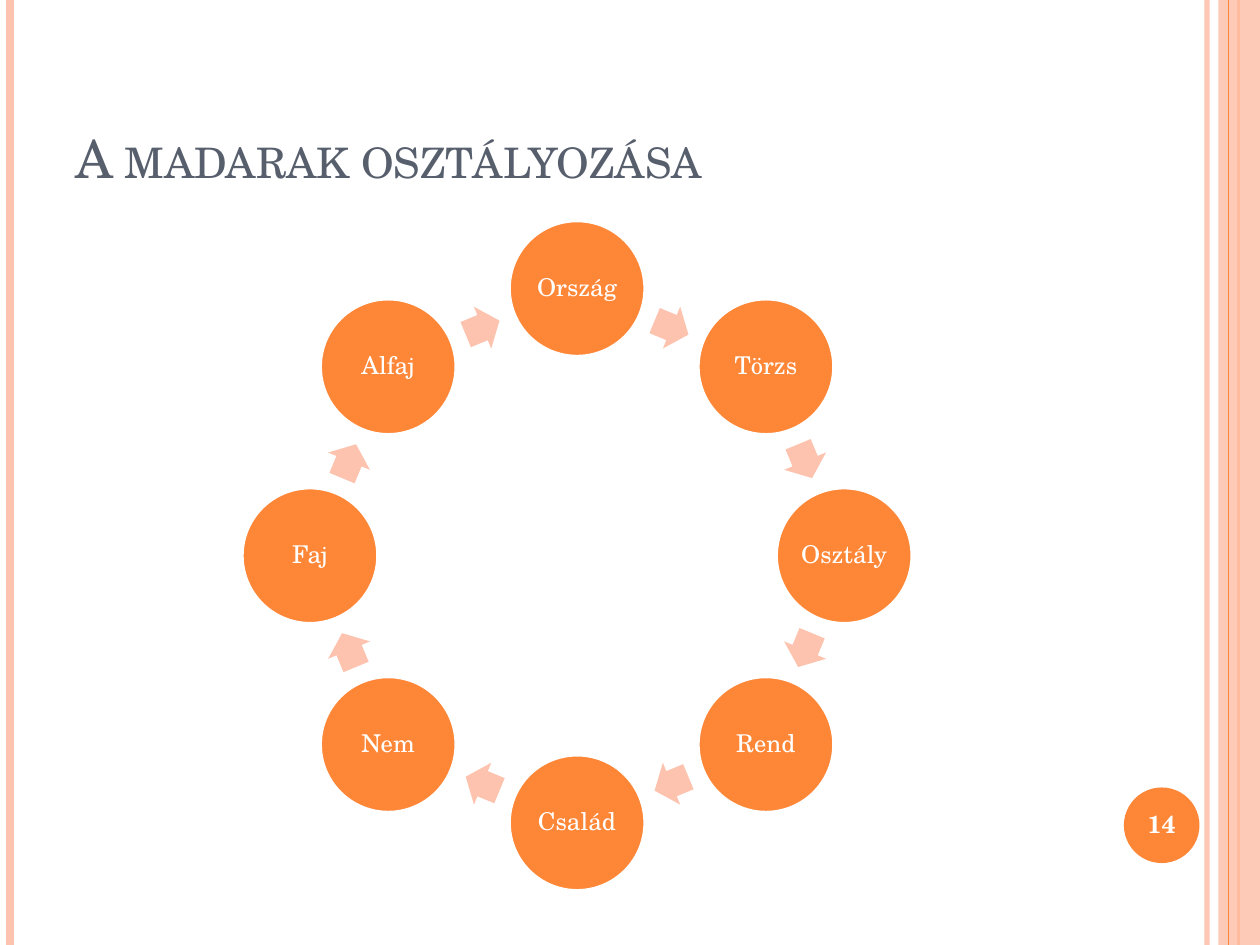
from math import cos, pi, sin

from lxml.etree import SubElement
from pptx import Presentation
from pptx.dml.color import RGBColor
from pptx.enum.shapes import MSO_CONNECTOR, MSO_SHAPE
from pptx.enum.text import MSO_ANCHOR, PP_ALIGN
from pptx.oxml.ns import qn
from pptx.util import Inches, Pt

COLORS = {"orange": "FE8637", "peach": "FEC3AE", "slate": "575F6D", "white": "FFFFFF"}
FONT = "TeX Gyre Schola"
RANKS = ["Ország", "Törzs", "Osztály", "Rend", "Család", "Nem", "Faj", "Alfaj"]
CENTER_X, CENTER_Y, RADIUS = 4.58, 4.41, 2.12
CIRCLE = 1.08
ARROW_WIDTH, ARROW_HEIGHT = 0.29, 0.36


class SlideStyle:
    """Holds the colours, the font and the slide being drawn."""

    def __init__(self, page, colors, font):
        self.page = page
        self.colors = colors
        self.font = font

    def color(self, name):
        """Return the named colour."""
        return RGBColor.from_string(self.colors[name])

    def fade(self, fill, opacity):
        """Make a solid fill partly transparent, with opacity in percent."""
        if opacity < 100:
            node = next(fill.iter(qn("a:srgbClr")))
            SubElement(node, qn("a:alpha"), val=str(opacity * 1000))

    def stripe(self, x, name, width, opacity=100):
        """Draw a vertical line over the full height."""
        line = self.page.shapes.add_connector(
            MSO_CONNECTOR.STRAIGHT, Inches(x), Inches(0), Inches(x), Inches(7.5))
        line.line.color.rgb = self.color(name)
        line.line.width = Pt(width)
        properties = line._element.spPr
        self.fade(properties, opacity)
        SubElement(properties, qn("a:effectLst"))

    def shape(self, kind, x, y, width, height, fill, opacity=100):
        """Draw a filled preset shape without an outline."""
        shape = self.page.shapes.add_shape(
            kind, Inches(x), Inches(y), Inches(width), Inches(height))
        shape.shadow.inherit = False
        shape.fill.solid()
        shape.fill.fore_color.rgb = self.color(fill)
        self.fade(shape._element.spPr, opacity)
        shape.line.fill.background()
        return shape

    def label(self, shape, text, size, color, align, anchor, bold=False):
        """Put one styled paragraph into a shape and return its run."""
        frame = shape.text_frame
        frame.word_wrap = True
        frame.vertical_anchor = anchor
        frame.text = text
        para = frame.paragraphs[0]
        para.alignment = align
        span = para.runs[0]
        span.font.size = Pt(size)
        span.font.name = self.font
        span.font.bold = bold
        span.font.color.rgb = self.color(color)
        return span

    def title(self, text, x, y, width, height):
        """Set the heading in small capitals."""
        box = self.page.shapes.add_textbox(
            Inches(x), Inches(y), Inches(width), Inches(height))
        span = self.label(box, text, 30, "slate", PP_ALIGN.LEFT, MSO_ANCHOR.BOTTOM)
        span.font._element.set("cap", "small")

    def circle(self, text, x, y, size, bold=False):
        """Draw an orange circle with a centred label."""
        circle = self.shape(MSO_SHAPE.OVAL, x, y, size, size, "orange")
        frame = circle.text_frame
        frame.margin_left = frame.margin_right = Inches(0.02)
        frame.margin_top = frame.margin_bottom = Inches(0.02)
        self.label(circle, text, 14, "white", PP_ALIGN.CENTER, MSO_ANCHOR.MIDDLE, bold)
        frame.paragraphs[0].line_spacing = 0.9
        return circle

    def rank(self, text, x, y):
        """Draw one circle of the cycle around its centre."""
        circle = self.circle(text, x - CIRCLE / 2, y - CIRCLE / 2, CIRCLE)
        circle.line.color.rgb = self.color("white")
        circle.line.width = Pt(2)

    def arrow(self, x, y, rotation):
        """Draw one turned block arrow around its centre."""
        arrow = self.shape(MSO_SHAPE.RIGHT_ARROW, x - ARROW_WIDTH / 2,
                           y - ARROW_HEIGHT / 2, ARROW_WIDTH, ARROW_HEIGHT, "peach")
        arrow.adjustments[0] = 0.6
        arrow.adjustments[1] = 0.5
        arrow.rotation = rotation

    def cycle(self, labels):
        """Place the circles on a ring, with an arrow between neighbours."""
        step = 2 * pi / len(labels)
        middle = RADIUS * cos(step / 2)
        for index, label in enumerate(labels):
            angle = index * step
            self.rank(label, CENTER_X + RADIUS * sin(angle), CENTER_Y - RADIUS * cos(angle))
            angle += step / 2
            self.arrow(CENTER_X + middle * sin(angle), CENTER_Y - middle * cos(angle),
                       (index + 0.5) * 360 / len(labels))


def main():
    """Build the slide and save it."""
    deck = Presentation()
    deck.slide_width, deck.slide_height = Inches(10), Inches(7.5)
    page = deck.slides.add_slide(deck.slide_layouts[6])
    style = SlideStyle(page, COLORS, FONT)
    style.stripe(9.58, "peach", 3, 93)
    style.stripe(0.08, "peach", 4.5)
    style.stripe(9.83, "orange", 1.5)
    style.shape(MSO_SHAPE.RECTANGLE, 9.67, 0, 0.33, 7.5, "peach", 87)
    style.stripe(9.75, "orange", 0.75)
    style.title("A madarak osztályozása", 0.5, 0.3, 8.17, 1.25)
    style.cycle(RANKS)
    style.circle("14", 8.92, 6.25, 0.6, bold=True)
    deck.save("out.pptx")


if __name__ == "__main__":
    main()
